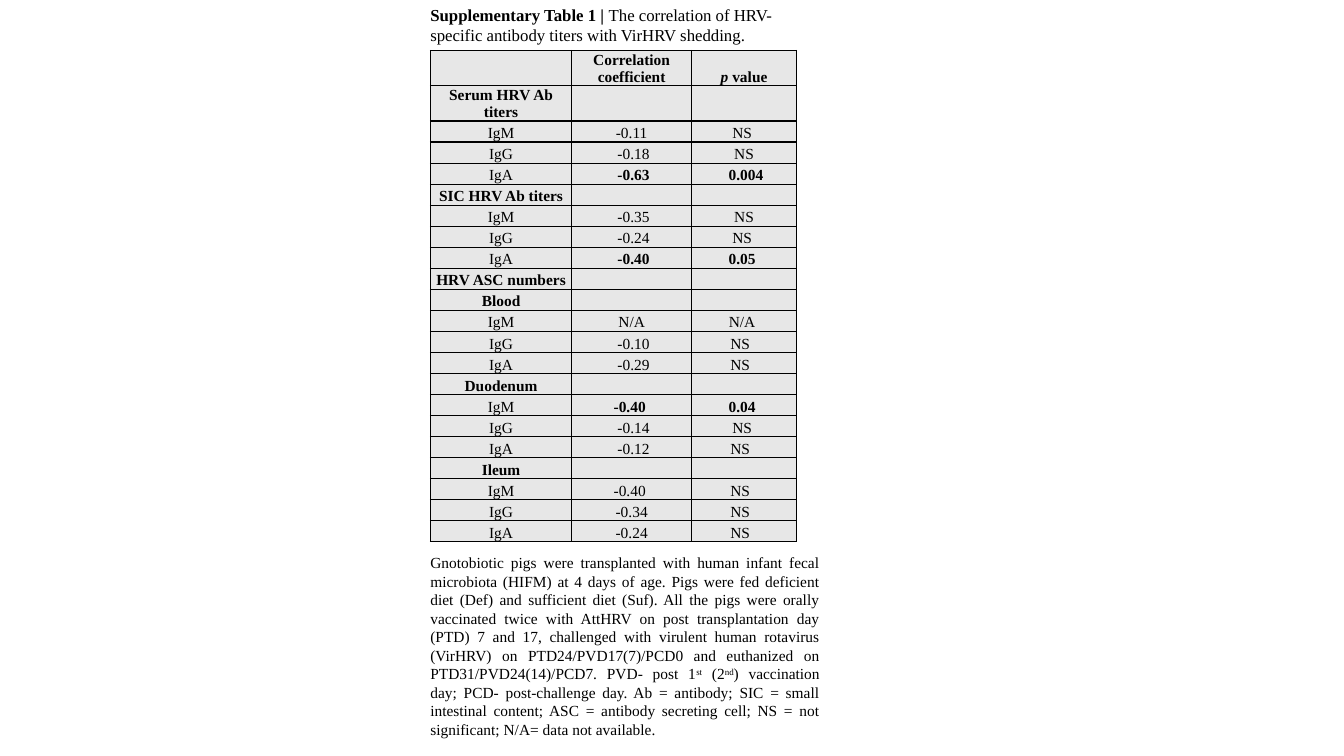
from dataclasses import dataclass

from lxml.etree import SubElement
from pptx import Presentation
from pptx.dml.color import RGBColor
from pptx.enum.text import MSO_ANCHOR, MSO_AUTO_SIZE, PP_ALIGN
from pptx.oxml import parse_xml
from pptx.oxml.ns import qn
from pptx.util import Inches, Length, Pt

FONT = "Times New Roman"
BLACK = "000000"
CELL_GREY = "E7E7E7"
NAMESPACE = "http://schemas.openxmlformats.org/drawingml/2006/main"
UNIT = 0.1  # side of one grid square, in inches
NBSP = chr(160)  # "~" in the table text stands for a non-breaking space


@dataclass(frozen=True)
class Span:
    text: str
    bold: bool = False
    italic: bool = False
    raised: bool = False


@dataclass(frozen=True)
class TextBlock:
    row: float
    height: float
    size: float
    align: PP_ALIGN
    spans: tuple[Span, ...]


@dataclass(frozen=True)
class Record:
    label: str
    coefficient: str = ""
    p_value: str = ""
    strong: bool = False  # significant correlation

    @property
    def is_heading(self) -> bool:
        return not self.coefficient


# Content
RECORDS = (
    Record("Serum HRV Ab titers"),
    Record("IgM", "-0.11", "NS~"),
    Record("IgG", "~-0.18", "~NS~"),
    Record("IgA", "~-0.63", "~0.004", strong=True),
    Record("SIC HRV Ab titers"),
    Record("IgM", "~-0.35", "~NS~"),
    Record("IgG", "~-0.24", "NS~"),
    Record("IgA", "~-0.40", "0.05~", strong=True),
    Record("HRV ASC numbers"),
    Record("Blood"),
    Record("IgM", "N/A", "N/A~"),
    Record("IgG", "~-0.10", "NS~~"),
    Record("IgA", "~-0.29", "NS~~"),
    Record("Duodenum"),
    Record("IgM", "-0.40~", "0.04~", strong=True),
    Record("IgG", "~-0.14", "NS~"),
    Record("IgA", "~-0.12", "NS~~"),
    Record("Ileum"),
    Record("IgM", "-0.40~", "NS~~"),
    Record("IgG", "-0.34", "NS~~"),
    Record("IgA", "-0.24", "NS~~"),
)
HEADER = (
    (),
    (Span("Correlation coefficient", bold=True),),
    (Span("p", bold=True, italic=True), Span(" value", bold=True)),
)
TITLE = TextBlock(0, 7.1, 12, PP_ALIGN.LEFT, (
    Span("Supplementary Table 1 | ", bold=True),
    Span("The correlation of HRV-specific antibody titers with VirHRV shedding."),
))
FOOTNOTE = TextBlock(54.4, 21.4, 11, PP_ALIGN.JUSTIFY, (
    Span("Gnotobiotic pigs were transplanted with human infant fecal microbiota "
         "(HIFM) at 4 days of age. Pigs were fed deficient diet (Def) and sufficient "
         "diet (Suf). All the pigs were orally vaccinated twice with AttHRV on post "
         "transplantation day (PTD) 7 and 17, challenged with virulent human rotavirus "
         "(VirHRV) on PTD24/PVD17(7)/PCD0 and euthanized on PTD31/PVD24(14)/PCD7. "
         "PVD- post 1"),
    Span("st", raised=True),
    Span(" (2"),
    Span("nd", raised=True),
    Span(") vaccination day; PCD- post-challenge day. Ab = antibody; SIC = small "
         "intestinal content; ASC = antibody secreting cell; NS = not significant; "
         "N/A= data not available."),
))

# Grid measures
TEXT_COLUMN, TEXT_WIDTH = 41.7, 40.6
TABLE_COLUMN, TABLE_ROW, TABLE_HEIGHT = 42.7, 5, 48.8
COLUMN_WIDTHS = (14, 11.9, 10.4)
TALL_ROWS, TALL_HEIGHT = 2, 3.5
TABLE_SIZE = 11


def grid(squares: float) -> Length:
    return Inches(squares * UNIT)


def colour(value: str) -> RGBColor:
    return RGBColor.from_string(value)


def write_spans(para, spans: tuple[Span, ...], size: float) -> None:
    for span in spans:
        run = para.add_run()
        run.text = span.text.replace("~", NBSP)
        run.font.name = FONT
        run.font.size = Pt(size)
        run.font.bold = span.bold
        run.font.italic = span.italic
        run.font.color.rgb = colour(BLACK)
        if span.raised:
            run.font._element.set("baseline", "30000")


def draw_text(page, block: TextBlock) -> None:
    box = page.shapes.add_textbox(
        grid(TEXT_COLUMN), grid(block.row), grid(TEXT_WIDTH), grid(block.height))
    frame = box.text_frame
    frame.word_wrap = True
    frame.auto_size = MSO_AUTO_SIZE.SHAPE_TO_FIT_TEXT
    para = frame.paragraphs[0]
    para.alignment = block.align
    write_spans(para, block.spans, block.size)


def add_borders(cell) -> None:
    properties = cell._tc.get_or_add_tcPr()
    for index, side in enumerate(("lnL", "lnR", "lnT", "lnB")):
        properties.insert(index, parse_xml(
            f'<a:{side} xmlns:a="{NAMESPACE}" w="{Pt(1)}"><a:solidFill>'
            f'<a:srgbClr val="{BLACK}"/></a:solidFill></a:{side}>'))


def fill_cell(cell, spans: tuple[Span, ...]) -> None:
    cell.fill.solid()
    cell.fill.fore_color.rgb = colour(CELL_GREY)
    cell.vertical_anchor = MSO_ANCHOR.BOTTOM
    cell.margin_left = cell.margin_right = cell.margin_top = Inches(0.01)
    cell.margin_bottom = 0
    add_borders(cell)
    para = cell.text_frame.paragraphs[0]
    para.alignment = PP_ALIGN.CENTER
    write_spans(para, spans, TABLE_SIZE)
    if not spans:  # keeps empty cells from stretching their row
        SubElement(para._p, qn("a:endParaRPr"), sz=str(TABLE_SIZE * 100))


def record_cells(record: Record) -> tuple[tuple[Span, ...], ...]:
    if record.is_heading:
        return (Span(record.label, bold=True),), (), ()
    return ((Span(record.label),),
            (Span(record.coefficient, bold=record.strong),),
            (Span(record.p_value, bold=record.strong),))


def draw_table(page) -> None:
    rows = (HEADER, *map(record_cells, RECORDS))
    table = page.shapes.add_table(
        len(rows), len(COLUMN_WIDTHS), grid(TABLE_COLUMN), grid(TABLE_ROW),
        grid(sum(COLUMN_WIDTHS)), grid(TABLE_HEIGHT)).table
    table.first_row = table.horz_banding = False
    for column, width in zip(table.columns, COLUMN_WIDTHS):
        column.width = grid(width)
    low_height = (TABLE_HEIGHT - TALL_ROWS * TALL_HEIGHT) / (len(rows) - TALL_ROWS)
    for row_index, row in enumerate(rows):
        height = TALL_HEIGHT if row_index < TALL_ROWS else low_height
        table.rows[row_index].height = grid(height)
        for column_index, spans in enumerate(row):
            fill_cell(table.cell(row_index, column_index), spans)


def main() -> None:
    deck = Presentation()
    deck.slide_width, deck.slide_height = Inches(13.33), Inches(7.5)
    page = deck.slides.add_slide(deck.slide_layouts[6])
    draw_table(page)
    for block in (TITLE, FOOTNOTE):
        draw_text(page, block)
    deck.save("out.pptx")


if __name__ == "__main__":
    main()
